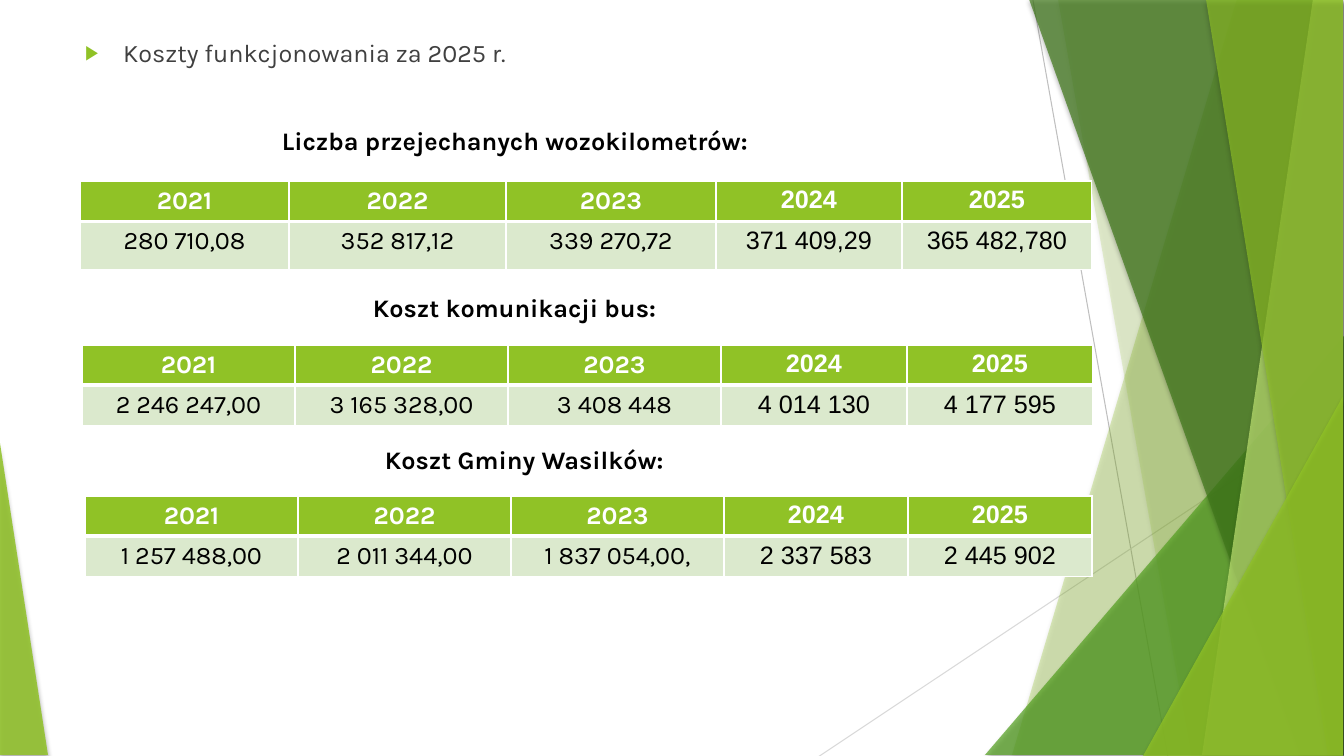
import pptx
import pptx.util
import pptx.dml.color
import pptx.enum.shapes
import pptx.enum.text
import pptx.oxml
import pptx.oxml.ns
from lxml import etree

WIDTH, HEIGHT = 1344, 756
COLORS = {
    "lime": "90C226", "green": "54A021", "forest": "3F7819", "pale": "C0E474",
    "cell": "DBE9CD", "white": "FFFFFF", "black": "000000", "text": "404040",
    "gray": "BFBFBF", "light gray": "D9D9D9",
}
YEARS = ["2021", "2022", "2023", "2024", "2025"]
COLUMN_FONTS = ["Karla"] * 3 + ["Arial"] * 2


def px(value):
    return pptx.util.Emu(round(value * 12192000 / WIDTH))


def rgb(name):
    return pptx.dml.color.RGBColor.from_string(COLORS[name])


def add_xml(parent, tag, **attributes):
    return etree.SubElement(parent, pptx.oxml.ns.qn(tag), attributes)


class CostSlide:
    def __init__(self, deck):
        self.slide = deck.slides.add_slide(deck.slide_layouts[1])
        self.shapes = self.slide.shapes
        title = self.shapes.title.element
        title.getparent().remove(title)

    def style(self, paragraph, color, font="Karla", bold=False):
        paragraph.font.name = font
        paragraph.font.size = pptx.util.Pt(18)
        paragraph.font.bold = bold
        paragraph.font.color.rgb = rgb(color)

    def ray(self, start, end, color):
        line = self.shapes.add_connector(
            pptx.enum.shapes.MSO_CONNECTOR.STRAIGHT, *map(px, start + end))
        line.line.color.rgb = rgb(color)
        line.line.width = pptx.util.Pt(0.75)
        add_xml(line.element.spPr, "a:effectLst")

    def glass(self, shape, color, opacity):
        """Translucent fill with a soft shadow."""
        shape.fill.solid()
        shape.fill.fore_color.rgb = rgb(color)
        shape.line.fill.background()
        shape.shadow.inherit = False
        properties = shape.element.spPr
        fill = properties.find(".//" + pptx.oxml.ns.qn("a:solidFill"))[0]
        add_xml(fill, "a:alpha", val=str(opacity * 1000))
        effects = properties.find(pptx.oxml.ns.qn("a:effectLst"))
        shadow = add_xml(effects, "a:outerShdw", blurRad="38100", dist="25400",
                         dir="5400000", rotWithShape="0")
        shade = add_xml(shadow, "a:srgbClr", val=COLORS["black"])
        add_xml(shade, "a:alpha", val="35000")

    def band(self, top_left, bottom_left, color, opacity):
        """Panel from a slanted left edge to the right side of the slide."""
        right, top, bottom = WIDTH - 1, -1, HEIGHT - 1
        outline = self.shapes.build_freeform(px(top_left), px(top))
        corners = [(right, top), (right, bottom), (bottom_left, bottom)]
        outline.add_line_segments([(px(x), px(y)) for x, y in corners])
        self.glass(outline.convert_to_shape(), color, opacity)

    def triangle(self, box, peak, color, opacity):
        shape = self.shapes.add_shape(
            pptx.enum.shapes.MSO_SHAPE.ISOSCELES_TRIANGLE, *map(px, box))
        shape.adjustments[0] = peak
        self.glass(shape, color, opacity)

    def bullet(self, text, box):
        body = self.slide.placeholders[1]
        body.left, body.top, body.width, body.height = map(px, box)
        body.text_frame.auto_size = pptx.enum.text.MSO_AUTO_SIZE.NONE
        # Keep the text above the decoration
        element = body.element
        element.getparent().append(element)
        paragraph = body.text_frame.paragraphs[0]
        paragraph.text = text
        paragraph.space_before = pptx.util.Pt(0)
        properties = paragraph._p.get_or_add_pPr()
        properties.set("marL", str(px(38)))
        properties.set("indent", str(px(-38)))
        bullet_color = add_xml(properties, "a:buClr")
        add_xml(bullet_color, "a:srgbClr", val=COLORS["lime"])
        add_xml(properties, "a:buSzPct", val="80000")
        add_xml(properties, "a:buFont", typeface="Arial")
        add_xml(properties, "a:buChar", char="▶")
        self.style(paragraph, "text")

    def heading(self, text, left, top, width):
        frame = self.shapes.add_textbox(px(left), px(top), px(width), px(40)).text_frame
        frame.word_wrap = True
        frame.auto_size = pptx.enum.text.MSO_AUTO_SIZE.SHAPE_TO_FIT_TEXT
        frame.paragraphs[0].text = text
        self.style(frame.paragraphs[0], "black", bold=True)

    def borders(self, cell, bottom):
        properties = cell._tc.get_or_add_tcPr()
        widths = {"L": 0.96, "R": 0.96, "T": 0.96, "B": bottom}
        for position, (side, width) in enumerate(widths.items()):
            edge = pptx.oxml.parse_xml(
                f'<a:ln{side} {pptx.oxml.ns.nsdecls("a")} w="{pptx.util.Pt(width)}">'
                f'<a:solidFill><a:srgbClr val="{COLORS["white"]}"/></a:solidFill>'
                f'</a:ln{side}>')
            properties.insert(position, edge)

    def year_table(self, left, top, widths, heights, values):
        table = self.shapes.add_table(
            2, len(YEARS), px(left), px(top), px(sum(widths)), px(sum(heights))).table
        table.horz_banding = False
        for column, width in zip(table.columns, widths):
            column.width = px(width)
        for row, height in zip(table.rows, heights):
            row.height = px(height)
        rows = [(YEARS, "lime", "white", True, 3), (values, "cell", "black", False, 0.96)]
        for r, (texts, fill, color, bold, bottom) in enumerate(rows):
            for c, (text, font) in enumerate(zip(texts, COLUMN_FONTS)):
                cell = table.cell(r, c)
                cell.fill.solid()
                cell.fill.fore_color.rgb = rgb(fill)
                self.borders(cell, bottom)
                paragraph = cell.text_frame.paragraphs[0]
                paragraph.text = text
                paragraph.alignment = pptx.enum.text.PP_ALIGN.CENTER
                self.style(paragraph, color, font, bold)


def main():
    deck = pptx.Presentation()
    deck.slide_width, deck.slide_height = px(WIDTH), px(HEIGHT)
    costs = CostSlide(deck)

    # Green decoration
    costs.ray((1033, 0), (1168, 757), "gray")
    costs.ray((1345, 406), (818, 757), "light gray")
    costs.band(1237, 1012, "lime", 30)
    costs.band(1058, 1191, "lime", 20)
    costs.triangle((985, 336, 359, 419), 1, "green", 72)
    costs.band(1029, 1300, "forest", 70)
    costs.band(1313, 1202, "pale", 70)
    costs.band(1206, 1328, "lime", 65)
    costs.triangle((1143, 396, 200, 360), 1, "lime", 80)
    costs.triangle((0, 443, 48, 312), 0, "lime", 85)

    # Topic
    costs.bullet("Koszty funkcjonowania za 2025 r.", (75, 32, 1042, 724))

    # Distance driven
    costs.heading("Liczba przejechanych wozokilometrów:", 272, 120, 503)
    costs.year_table(80, 181, [209, 217, 210, 186, 190], [40, 48], [
        "280 710,08", "352 817,12", "339 270,72", "371 409,29", "365 482,780"])

    # Transport cost
    costs.heading("Koszt komunikacji bus:", 363, 287, 403)
    costs.year_table(82, 345, [213] * 3 + [186] * 2, [40, 40], [
        "2 246 247,00", "3 165 328,00", "3 408 448", "4 014 130", "4 177 595"])

    # Municipality cost
    costs.year_table(85, 496, [213] * 3 + [184] * 2, [40, 40], [
        "1 257 488,00", "2 011 344,00", "1 837 054,00,", "2 337 583", "2 445 902"])
    costs.heading("Koszt Gminy Wasilków:", 375, 439, 403)

    deck.save("out.pptx")


if __name__ == "__main__":
    main()
